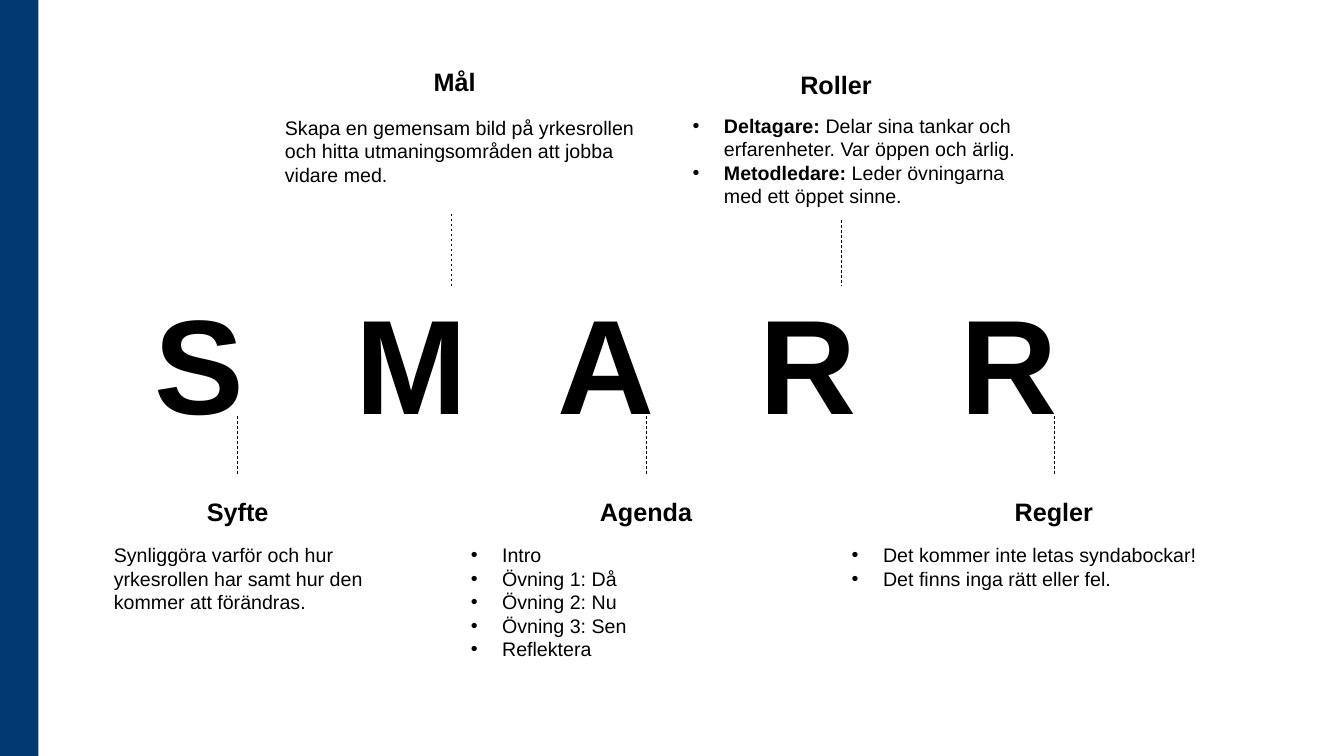
from lxml import etree
from pptx import Presentation
from pptx.dml.color import RGBColor
from pptx.enum.dml import MSO_LINE
from pptx.enum.shapes import MSO_CONNECTOR, MSO_SHAPE
from pptx.enum.text import MSO_ANCHOR, MSO_AUTO_SIZE, PP_ALIGN
from pptx.oxml.ns import qn
from pptx.util import Cm, Pt

RECTANGLE = MSO_SHAPE.RECTANGLE
STRAIGHT = MSO_CONNECTOR.STRAIGHT
DASH = MSO_LINE.DASH
TOP = MSO_ANCHOR.TOP
NO_AUTOFIT = MSO_AUTO_SIZE.NONE
LEFT, CENTER = PP_ALIGN.LEFT, PP_ALIGN.CENTER

BLACK, NAVY = "000000", "003A70"
LETTER_PITCH = 5.08
BULLET_INDENT = 0.79
FRAME_FORMAT = {"word_wrap": True, "auto_size": NO_AUTOFIT, "vertical_anchor": TOP}
LETTER_FORMAT = {"size": Pt(96), "bold": True}
HEADING_FORMAT = {"size": Pt(18), "bold": True}
BODY_FORMAT = {"size": Pt(14), "bold": False}

SECTIONS = [
    {"heading": "Syfte", "heading_box": (3.07, 12.37, 5.84, 1.02),
     "body_box": (2.62, 13.56, 8.18, 2.06), "line": (5.97, 10.49, 11.94),
     "text": "Synliggöra varför och hur yrkesrollen har samt hur den kommer att förändras."},
    {"heading": "Mål", "heading_box": (8.59, 1.55, 5.74, 1.02),
     "body_box": (6.93, 2.79, 9.42, 2.06), "line": (11.38, 5.38, 7.21),
     "text": "Skapa en gemensam bild på yrkesrollen och hitta utmaningsområden att jobba vidare med."},
    {"heading": "Agenda", "heading_box": (13.36, 12.37, 5.84, 1.02),
     "body_box": (11.61, 13.56, 9.78, 3.25), "line": (16.28, 10.49, 11.94),
     "items": [("", "Intro"), ("", "Övning 1: Då"), ("", "Övning 2: Nu"),
               ("", "Övning 3: Sen"), ("", "Reflektera")]},
    {"heading": "Roller", "heading_box": (16.36, 1.63, 9.42, 1.02),
     "body_box": (17.2, 2.74, 9.42, 3.84), "line": (21.21, 5.54, 7.21),
     "items": [("Deltagare: ", "Delar sina tankar och erfarenheter. Var öppen och ärlig."),
               ("Metodledare: ", "Leder övningarna med ett öppet sinne.")]},
    {"heading": "Regler", "heading_box": (23.37, 12.37, 6.38, 1.02),
     "body_box": (21.21, 13.56, 10.95, 1.45), "line": (26.57, 10.49, 11.94),
     "items": [("", "Det kommer inte letas syndabockar!"),
               ("", "Det finns inga rätt eller fel.")]},
]


def color(hex_value):
    return RGBColor.from_string(hex_value)


def apply(target, values):
    for name, value in values.items():
        setattr(target, name, value)


def place(part, box):
    apply(part, dict(zip(("left", "top", "width", "height"), map(Cm, box))))
    apply(part.text_frame, FRAME_FORMAT)


def add_run(paragraph, text, values):
    run = paragraph.add_run()
    run.text = text
    apply(run.font, {"name": "Arial", **values})
    run.font.color.rgb = color(BLACK)


def add_text(slide, box, text, values, alignment):
    label = slide.shapes.add_textbox(0, 0, 0, 0)
    place(label, box)
    paragraph = label.text_frame.paragraphs[0]
    paragraph.alignment = alignment
    add_run(paragraph, text, values)


def add_side_bar(slide, box):
    bar = slide.shapes.add_shape(RECTANGLE, *map(Cm, box))
    bar.shadow.inherit = False
    bar.fill.solid()
    bar.fill.fore_color.rgb = color(NAVY)
    bar.line.fill.background()
    bar.element.getparent().insert(2, bar.element)


def fill_acronym(title, box, letters):
    place(title, box)
    apply(title.text_frame, {"margin_left": Cm(4.55), "margin_top": Cm(0.43), "margin_bottom": 0})
    paragraph = title.text_frame.paragraphs[0]
    paragraph.alignment = LEFT
    stops = etree.SubElement(paragraph._p.get_or_add_pPr(), qn("a:tabLst"))
    for number in range(1, len(letters)):
        etree.SubElement(stops, qn("a:tab"), pos=str(Cm(LETTER_PITCH * number)), algn="l")
    add_run(paragraph, "\t".join(letters), LETTER_FORMAT)


def fill_list(body, box, items):
    place(body, box)
    frame = body.text_frame
    for index, (role, text) in enumerate(items):
        paragraph = frame.add_paragraph() if index else frame.paragraphs[0]
        properties = paragraph._p.get_or_add_pPr()
        properties.set("marL", str(Cm(BULLET_INDENT)))
        properties.set("indent", str(-Cm(BULLET_INDENT)))
        etree.SubElement(properties, qn("a:buFont"), typeface="Arial")
        etree.SubElement(properties, qn("a:buChar"), char="•")
        apply(paragraph, {"alignment": LEFT, "space_before": Pt(0)})
        if role:
            add_run(paragraph, role, {**BODY_FORMAT, "bold": True})
        add_run(paragraph, text, BODY_FORMAT)


def add_dashed_line(slide, x, top, bottom):
    dashes = slide.shapes.add_connector(STRAIGHT, Cm(x), Cm(top), Cm(x), Cm(bottom))
    apply(dashes.line, {"width": Pt(0.5), "dash_style": DASH})
    dashes.line.color.rgb = color(BLACK)
    etree.SubElement(dashes.element.spPr, qn("a:effectLst"))


def add_section(slide, section, bodies):
    add_text(slide, section["heading_box"], section["heading"], HEADING_FORMAT, CENTER)
    add_dashed_line(slide, *section["line"])
    if "items" in section:
        fill_list(bodies.pop(), section["body_box"], section["items"])
    else:
        add_text(slide, section["body_box"], section["text"], BODY_FORMAT, LEFT)


def main():
    presentation = Presentation()
    apply(presentation, {"slide_width": Cm(33.87), "slide_height": Cm(19.05)})
    slide = presentation.slides.add_slide(presentation.slide_layouts.get_by_name("Comparison"))
    title, *bodies = slide.placeholders
    add_side_bar(slide, (0, 0, 0.97, 19.05))
    fill_acronym(title, (-0.66, 6.63, 33.87, 4.37), "SMARR")
    for section in SECTIONS:
        add_section(slide, section, bodies)
    for unused in bodies:
        unused.element.getparent().remove(unused.element)
    presentation.save("out.pptx")


if __name__ == "__main__":
    main()
